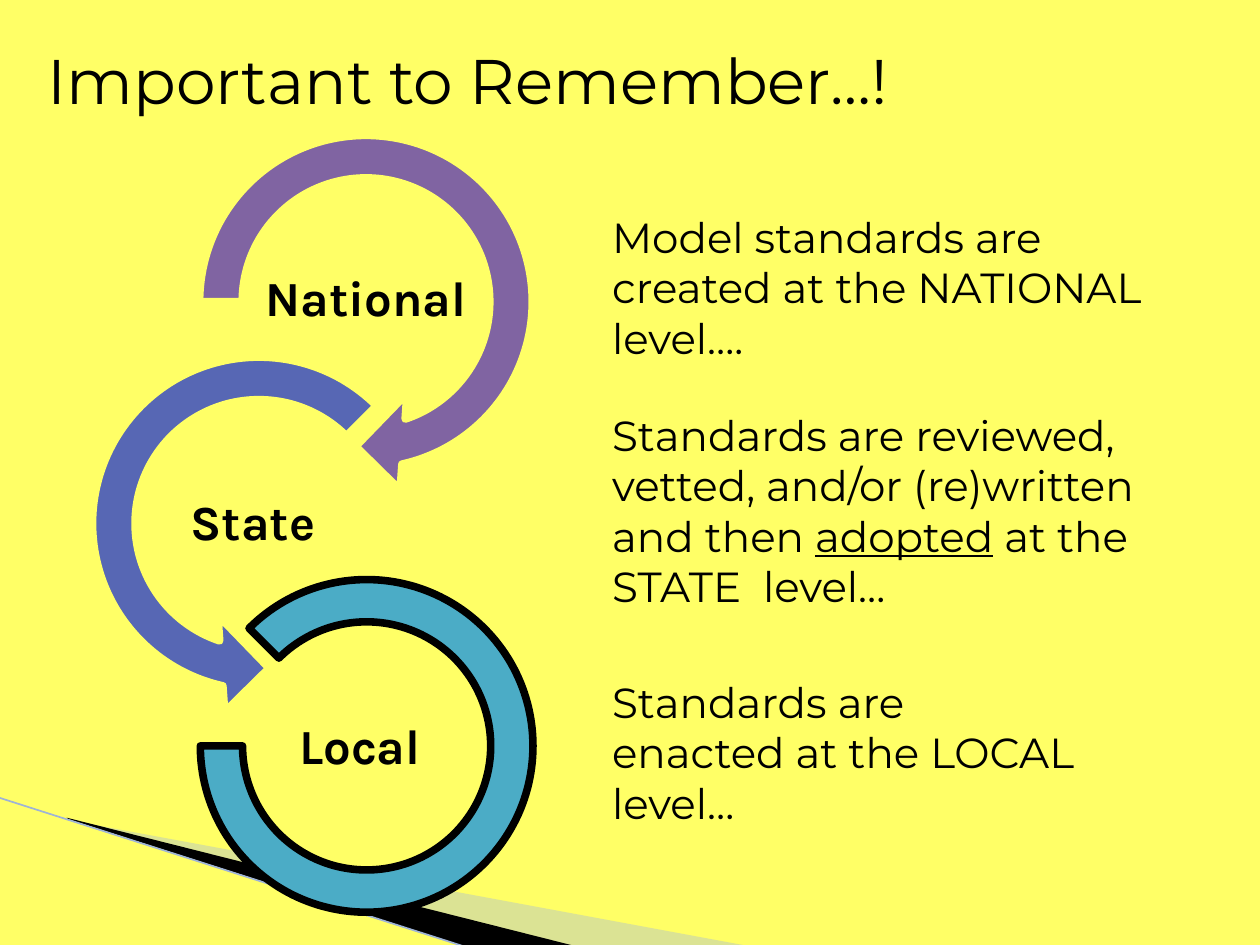
from pptx import Presentation
from pptx.dml.color import RGBColor
from pptx.enum.shapes import MSO_CONNECTOR as Link, MSO_SHAPE as Shape
from pptx.enum.text import MSO_ANCHOR as Anchor, MSO_AUTO_SIZE as Fit, PP_ALIGN as Align
from pptx.oxml import parse_xml
from pptx.oxml.ns import nsdecls
from pptx.util import Inches, Pt

PAGE = "FFFF66"
INK = "000000"


def tint(hue):
    return RGBColor.from_string(hue)


def place(box):
    return [Inches(n) for n in box]


def wedge(shapes, points, hue, alpha=None):
    start, *rest = [(Inches(x), Inches(y)) for x, y in points]
    form = shapes.build_freeform(*start, scale=1.0)
    form.add_line_segments(rest, close=True)
    shape = form.convert_to_shape()
    shape.shadow.inherit = False
    shape.fill.solid()
    shape.fill.fore_color.rgb = tint(hue)
    shape.line.fill.background()
    if alpha:
        color = shape.fill._xPr.find(".//{*}srgbClr")
        color.append(parse_xml(f'<a:alpha {nsdecls("a")} val="{alpha * 1000}"/>'))


def corner(shapes):
    wedge(shapes, [(0.55, 6.51), (5.95, 7.51), (4.56, 7.51), (0.55, 6.5)], "A7B9DB", 40)
    wedge(shapes, [(0.53, 6.49), (4.57, 7.51), (3.72, 7.52), (0.54, 6.5)], INK)
    edge = shapes.add_connector(Link.STRAIGHT, *place((-0.01, 6.33, 3.71, 7.52)))
    edge.line.color.rgb = tint("9EB3D6")
    edge.line.width = Pt(0.95)
    edge._element.spPr.append(parse_xml(f'<a:effectLst {nsdecls("a")}/>'))


def write(shapes, box, runs, font, size, bold=None):
    text = shapes.add_textbox(*place(box))
    frame = text.text_frame
    frame.word_wrap = True
    para = frame.paragraphs[0]
    for words, under in runs:
        run = para.add_run()
        run.text = words
        run.font.name = font
        run.font.size = Pt(size)
        run.font.bold = bold
        run.font.underline = under
        run.font.color.rgb = tint(INK)
    return frame


def ring(shapes, kind, box, turns, fill, line):
    arc = shapes.add_shape(kind, *place(box))
    arc.shadow.inherit = False
    for i, turn in enumerate(turns):
        arc.adjustments[i] = turn
    arc.fill.solid()
    arc.fill.fore_color.rgb = tint(fill)
    arc.line.color.rgb = tint(line)
    arc.line.width = Pt(4.33)


def label(shapes, box, words):
    frame = write(shapes, box, [(words, None)], "Karla", 28, True)
    frame.vertical_anchor = Anchor.MIDDLE
    frame.margin_left = frame.margin_right = Inches(0.02)
    frame.margin_top = frame.margin_bottom = Inches(0.02)
    para = frame.paragraphs[0]
    para.alignment = Align.CENTER
    para.line_spacing = 0.9


def cycle(shapes):
    levels = [
        (Shape.CIRCULAR_ARROW, (1.37, 0.86, 3.07, 3.07),
         (0.11, 11.423, 45, 108, 0.125), "8064A2", PAGE, 2.05, "National"),
        (Shape.LEFT_CIRCULAR_ARROW, (0.52, 2.62, 3.07, 3.07),
         (0.11, 11.423, 63, 189, 0.125), "5767B4", PAGE, 1.2, "State "),
        (Shape.BLOCK_ARC, (1.59, 4.6, 2.64, 2.64),
         (135, 108, 0.127), "4BACC6", INK, 2.05, "Local "),
    ]
    group = shapes.add_group_shape().shapes
    for i, (kind, box, turns, fill, line, left, words) in enumerate(levels):
        ring(group, kind, box, turns, fill, line)
        label(group, (left, 1.96 + 1.78 * i, 1.71, 0.85), words)


def note(shapes, box, runs, size=24):
    write(shapes, box, runs, "Montserrat", size).auto_size = Fit.SHAPE_TO_FIT_TEXT


def notes(shapes):
    note(shapes, (4.76, 1.63, 4.65, 1.31),
         [("Model standards are created at the NATIONAL  level….", None)])
    note(shapes, (4.76, 5.32, 3.94, 1.62),
         [("Standards are enacted at the LOCAL level…", None)])
    note(shapes, (4.76, 3.2, 4.65, 2.12),
         [("Standards are reviewed, vetted, and/or (re)written and then ", None),
          ("adopted", True), (" at the STATE  level…", None)])


def main():
    deck = Presentation()
    deck.slide_width, deck.slide_height = Inches(10), Inches(7.5)
    slide = deck.slides.add_slide(deck.slide_layouts[6])
    back = slide.background.fill
    back.solid()
    back.fore_color.rgb = tint(PAGE)
    corner(slide.shapes)
    cycle(slide.shapes)
    notes(slide.shapes)
    note(slide.shapes, (0.28, 0.28, 7.95, 0.71), [("Important to Remember…!", None)], 36)
    deck.save("out.pptx")


if __name__ == "__main__":
    main()
